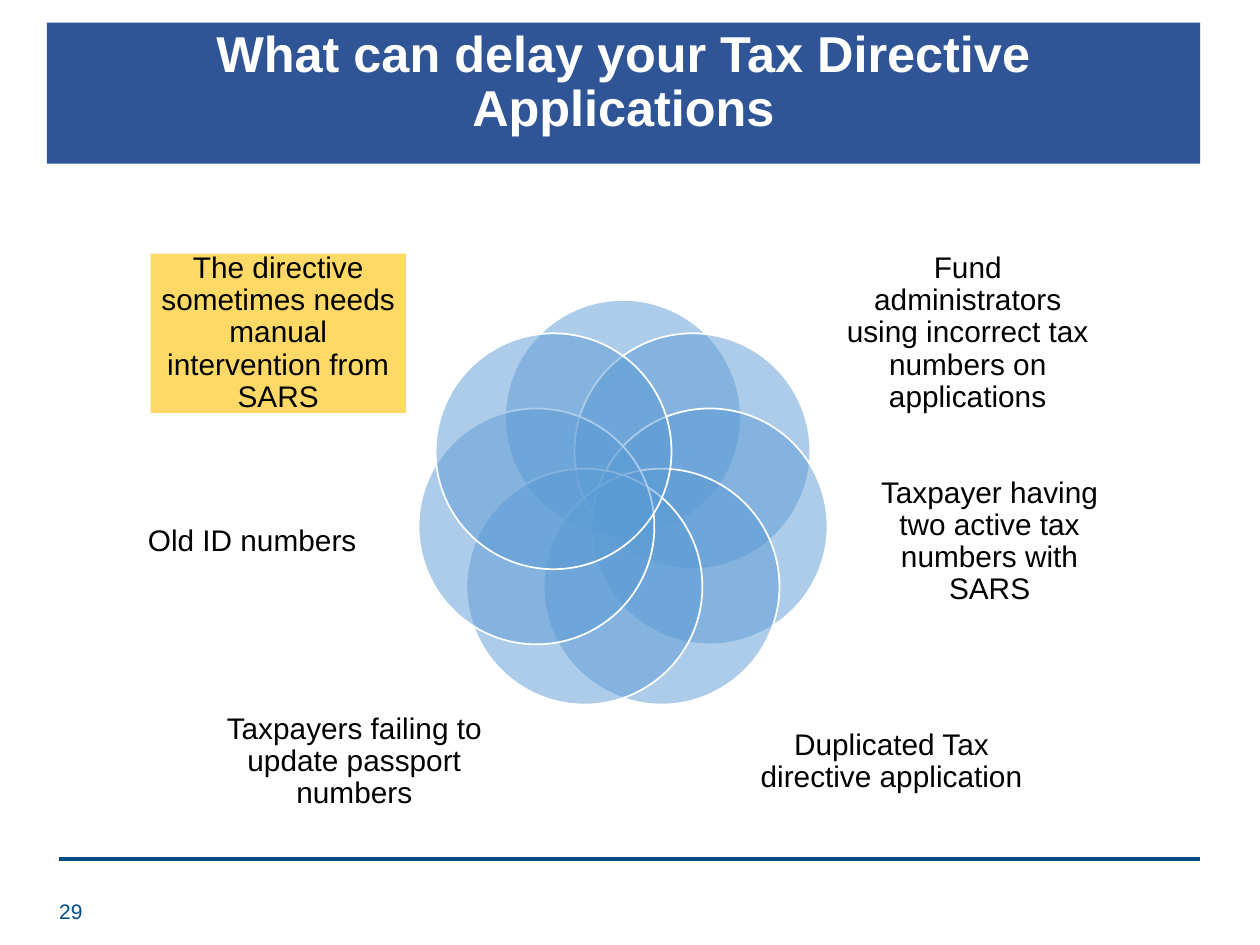
from math import cos, pi, sin

from lxml.etree import SubElement
from pptx import Presentation
from pptx.dml.color import RGBColor
from pptx.enum.shapes import MSO_CONNECTOR, MSO_SHAPE
from pptx.enum.text import MSO_ANCHOR, PP_ALIGN
from pptx.oxml.ns import qn
from pptx.util import Pt


def color(hex_value):
    return RGBColor.from_string(hex_value)


class SlideBuilder:
    FONT = "Arial"
    NAVY = "004C85"
    BANNER = "2F5597"
    CIRCLE = "5B9BD5"
    HIGHLIGHT = "FFD966"
    WHITE = "FFFFFF"
    BLACK = "000000"

    def __init__(self, slide):
        self.slide = slide

    def add_text(self, shape, text, size, ink, bold=False, align=PP_ALIGN.CENTER,
                 anchor=MSO_ANCHOR.MIDDLE, spacing=0.9):
        frame = shape.text_frame
        frame.word_wrap = True
        frame.vertical_anchor = anchor
        paragraph = frame.paragraphs[0]
        paragraph.alignment = align
        paragraph.line_spacing = spacing
        run = paragraph.add_run()
        run.text = text
        run.font.name = self.FONT
        run.font.size = Pt(size)
        run.font.bold = bold
        run.font.color.rgb = color(ink)
        return frame

    def shape(self, preset, left, top, width, height, fill):
        shape = self.slide.shapes.add_shape(
            preset, Pt(left), Pt(top), Pt(width), Pt(height))
        shape.shadow.inherit = False
        shape.fill.solid()
        shape.fill.fore_color.rgb = color(fill)
        shape.line.fill.background()
        return shape

    def banner(self, text, left, top, width, height):
        banner = self.shape(MSO_SHAPE.RECTANGLE, left, top, width, height, self.BANNER)
        self.add_text(banner, text, 28.8, self.WHITE, bold=True, anchor=MSO_ANCHOR.TOP)

    def circle(self, center_x, center_y, diameter):
        circle = self.shape(MSO_SHAPE.OVAL, center_x - diameter / 2,
                            center_y - diameter / 2, diameter, diameter, self.CIRCLE)
        fill_color = circle._element.spPr.find(qn("a:solidFill"))[0]
        SubElement(fill_color, qn("a:alpha"), val="50000")
        circle.line.color.rgb = color(self.WHITE)
        circle.line.width = Pt(1)

    def text_box(self, left, top, width, height):
        return self.slide.shapes.add_textbox(Pt(left), Pt(top), Pt(width), Pt(height))

    def label(self, text, left, top, width, height, fill=None):
        label = self.text_box(left, top, width, height)
        if fill:
            label.fill.solid()
            label.fill.fore_color.rgb = color(fill)
        frame = self.add_text(label, text, 17, self.BLACK)
        frame.margin_left = frame.margin_right = 0
        frame.margin_top = frame.margin_bottom = 0
        frame.paragraphs[0].space_after = Pt(6)

    def page_number(self, text, left, top, width, height):
        number = self.text_box(left, top, width, height)
        self.add_text(number, text, 12, self.NAVY, align=PP_ALIGN.LEFT, spacing=1.0)

    def rule(self, left, right, y):
        rule = self.slide.shapes.add_connector(
            MSO_CONNECTOR.STRAIGHT, Pt(left), Pt(y), Pt(right), Pt(y))
        rule.line.color.rgb = color(self.NAVY)
        rule.line.width = Pt(2)
        SubElement(rule._element.spPr, qn("a:effectLst"))


CENTER_X, CENTER_Y = 356, 289.5
RING_RADIUS = 50.75
DIAMETER = 134.8
CIRCLE_COUNT = 7

LABEL_ROWS = [
    ((480, 145, 146, 91),
     "Fund administrators using incorrect tax numbers on applications",
     "The directive sometimes needs manual intervention from SARS",
     SlideBuilder.HIGHLIGHT),
    ((494, 261, 143, 97),
     "Taxpayer having two active tax numbers with SARS",
     "Old ID numbers ", None),
    ((432, 391, 155, 89),
     "Duplicated Tax directive application",
     "Taxpayers failing to update passport numbers", None),
]


def main():
    presentation = Presentation()
    presentation.slide_width = Pt(720)
    presentation.slide_height = Pt(540)
    builder = SlideBuilder(presentation.slides.add_slide(presentation.slide_layouts[6]))

    builder.rule(34, 686, 491)
    builder.banner("What can delay your Tax Directive Applications", 26.8, 13, 659, 80.5)
    builder.page_number("29", 26.8, 506, 33, 29)

    for position in range(CIRCLE_COUNT):
        angle = 2 * pi * position / CIRCLE_COUNT
        builder.circle(CENTER_X + RING_RADIUS * sin(angle),
                       CENTER_Y - RING_RADIUS * cos(angle), DIAMETER)

    for (left, top, width, height), right_cause, left_cause, left_fill in LABEL_ROWS:
        mirrored_left = 2 * CENTER_X - left - width
        builder.label(right_cause, left, top, width, height)
        builder.label(left_cause, mirrored_left, top, width, height, left_fill)

    presentation.save("out.pptx")


if __name__ == "__main__":
    main()
